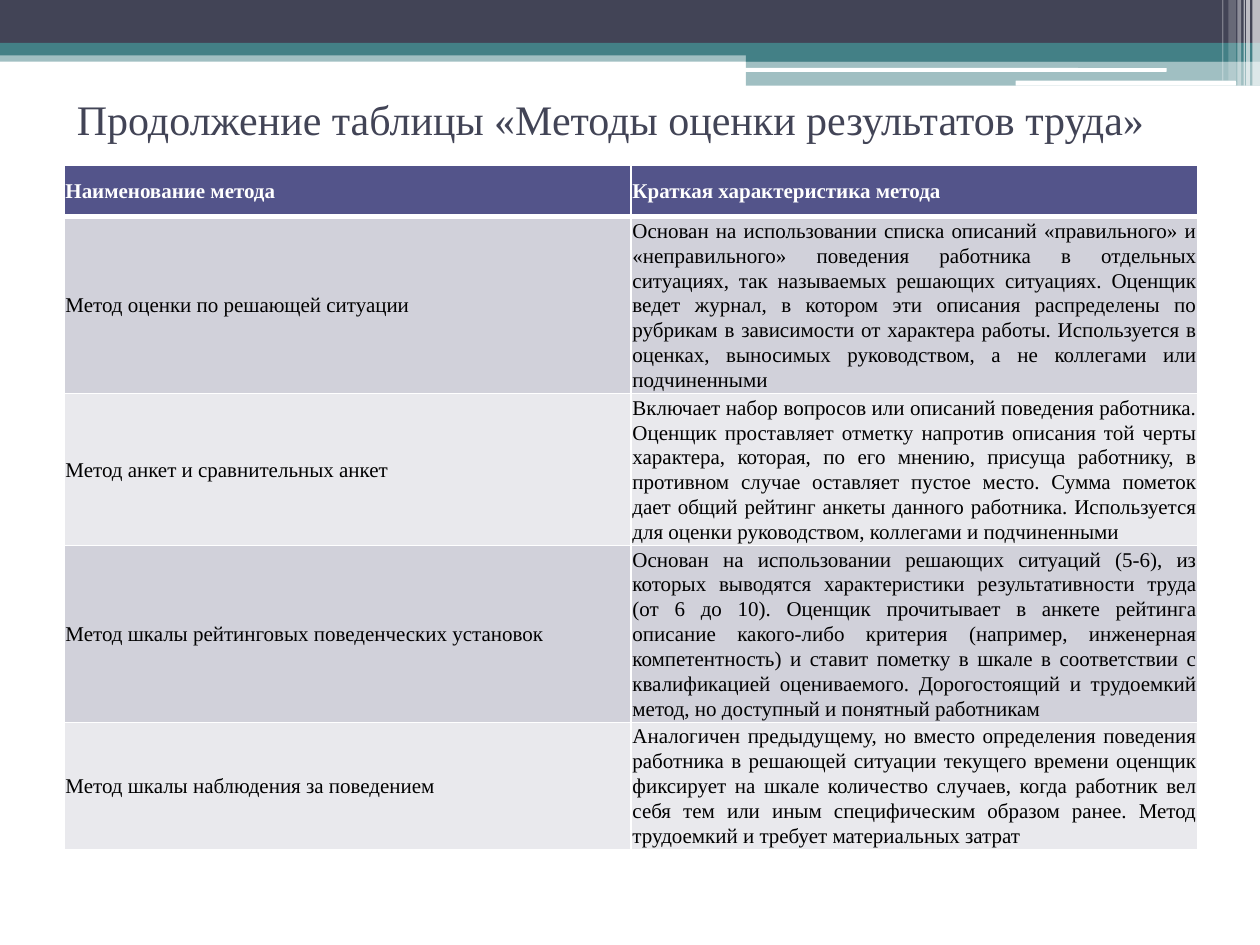
from lxml.etree import SubElement
from pptx import Presentation
from pptx.dml.color import RGBColor
from pptx.enum.shapes import MSO_SHAPE as Shape
from pptx.enum.text import MSO_ANCHOR as Anchor, PP_ALIGN as Align
from pptx.oxml.ns import qn
from pptx.util import Inches, Pt

FONT = "Times New Roman"
COLORS = {
    "white": "FFFFFF",
    "black": "000000",
    "slate": "424456",
    "teal": "438086",
    "header": "53548A",
    "odd": "D1D1DA",
    "even": "E9E9ED",
}
BANDS = [
    (0, 0.4, 10, 0.09, "teal", 50),
    (0, 0, 10, 0.34, "slate", 100),
    (0, 0.34, 10, 0.1, "teal", 100),
    (5.92, 0.39, 4.08, 0.1, "teal", 100),
    (5.92, 0.48, 4.08, 0.2, "teal", 50),
]
PILLS = [(5.91, 0.54, 3.35, 0.03), (8.06, 0.64, 1.75, 0.04)]
STRIPES = [
    (9.94, 0.06, 0.68, 65),
    (9.89, 0.03, 0.68, 65),
    (9.87, 0.01, 0.68, 60),
    (9.82, 0.03, 0.68, 40),
    (9.75, 0.06, 0.64, 20),
    (9.7, 0.01, 0.64, 30),
]
TITLE = "Продолжение таблицы «Методы оценки результатов труда»"
ROWS = [
    ("Наименование метода", "Краткая характеристика метода"),
    (
        "Метод оценки по решающей ситуации",
        "Основан на использовании списка описаний «правильного» и «неправильного» "
        "поведения работника в отдельных ситуациях, так называемых решающих ситуациях. "
        "Оценщик ведет журнал, в котором эти описания распределены по рубрикам в "
        "зависимости от характера работы. Используется в оценках, выносимых "
        "руководством, а не коллегами или подчиненными",
    ),
    (
        "Метод анкет и сравнительных анкет",
        "Включает набор вопросов или описаний поведения работника. Оценщик проставляет "
        "отметку напротив описания той черты характера, которая, по его мнению, присуща "
        "работнику, в противном случае оставляет пустое место. Сумма пометок дает общий "
        "рейтинг анкеты данного работника. Используется для оценки руководством, "
        "коллегами и подчиненными",
    ),
    (
        "Метод шкалы рейтинговых поведенческих установок",
        "Основан на использовании решающих ситуаций (5-6), из которых выводятся "
        "характеристики результативности труда (от 6 до 10). Оценщик прочитывает в "
        "анкете рейтинга описание какого-либо критерия (например, инженерная "
        "компетентность) и ставит пометку в шкале в соответствии с квалификацией "
        "оцениваемого. Дорогостоящий и трудоемкий метод, но доступный и понятный "
        "работникам",
    ),
    (
        "Метод шкалы наблюдения за поведением",
        "Аналогичен предыдущему, но вместо определения поведения работника в решающей "
        "ситуации текущего времени оценщик фиксирует на шкале количество случаев, когда "
        "работник вел себя тем или иным специфическим образом ранее. Метод трудоемкий и "
        "требует материальных затрат",
    ),
]


def rgb(name):
    return RGBColor.from_string(COLORS[name])


def write_text(frame, text, size=12, color="black", bold=False, align=Align.LEFT, spacing=1.0):
    para = frame.paragraphs[0]
    para.alignment = align
    para.line_spacing = spacing
    span = para.add_run()
    span.text = text
    span.font.name = FONT
    span.font.size = Pt(size)
    span.font.bold = bold
    span.font.color.rgb = rgb(color)


def add_bar(page, left, top, width, height, color="white", opacity=100, kind=Shape.RECTANGLE):
    bar = page.shapes.add_shape(kind, Inches(left), Inches(top), Inches(width), Inches(height))
    bar.shadow.inherit = False
    bar.line.fill.background()
    bar.fill.solid()
    bar.fill.fore_color.rgb = rgb(color)
    if opacity < 100:
        tint = bar.fill._xPr.find(".//" + qn("a:srgbClr"))
        SubElement(tint, qn("a:alpha"), val=str(opacity * 1000))


def add_decoration(page):
    for band in BANDS:
        add_bar(page, *band)
    for pill in PILLS:
        add_bar(page, *pill, kind=Shape.ROUNDED_RECTANGLE)
    for left, width, height, opacity in STRIPES:
        add_bar(page, left, 0, width, height, opacity=opacity)


def add_title(page):
    box = page.shapes.title
    box.left, box.top, box.width, box.height = map(Inches, (0.51, 0.68, 9, 0.53))
    box.text_frame.word_wrap = True
    box.text_frame.vertical_anchor = Anchor.MIDDLE
    write_text(box.text_frame, TITLE, size=24, color="slate")


def set_borders(cell, top=1, bottom=1):
    properties = cell._tc.get_or_add_tcPr()
    for side, points in (("L", 1), ("R", 1), ("T", top), ("B", bottom)):
        line = SubElement(properties, qn("a:ln" + side), w=str(Pt(points)))
        fill = SubElement(line, qn("a:solidFill"))
        SubElement(fill, qn("a:srgbClr"), val=COLORS["white"])


def format_cell(cell, text, row):
    is_header = row == 0
    cell.margin_left = cell.margin_right = Inches(0.01)
    cell.margin_top = cell.margin_bottom = Inches(0.01)
    cell.vertical_anchor = Anchor.MIDDLE
    set_borders(cell, top=3 if row == 1 else 1, bottom=3 if is_header else 1)
    cell.fill.solid()
    cell.fill.fore_color.rgb = rgb("header" if is_header else "odd" if row % 2 else "even")
    write_text(
        cell.text_frame,
        text,
        color="white" if is_header else "black",
        bold=is_header,
        align=Align.JUSTIFY,
        spacing=1.07,
    )


def add_methods_table(page):
    row_height = Inches(0.41)
    frame = page.shapes.add_table(
        len(ROWS), 2, Inches(0.51), Inches(1.31), Inches(9), row_height * len(ROWS)
    )
    table = frame.table
    for row, texts in enumerate(ROWS):
        table.rows[row].height = row_height
        for column, text in enumerate(texts):
            format_cell(table.cell(row, column), text, row)


def main():
    deck = Presentation()
    deck.slide_width, deck.slide_height = Inches(10), Inches(7.5)
    page = deck.slides.add_slide(deck.slide_layouts[5])
    add_decoration(page)
    add_title(page)
    add_methods_table(page)
    deck.save("out.pptx")


if __name__ == "__main__":
    main()
